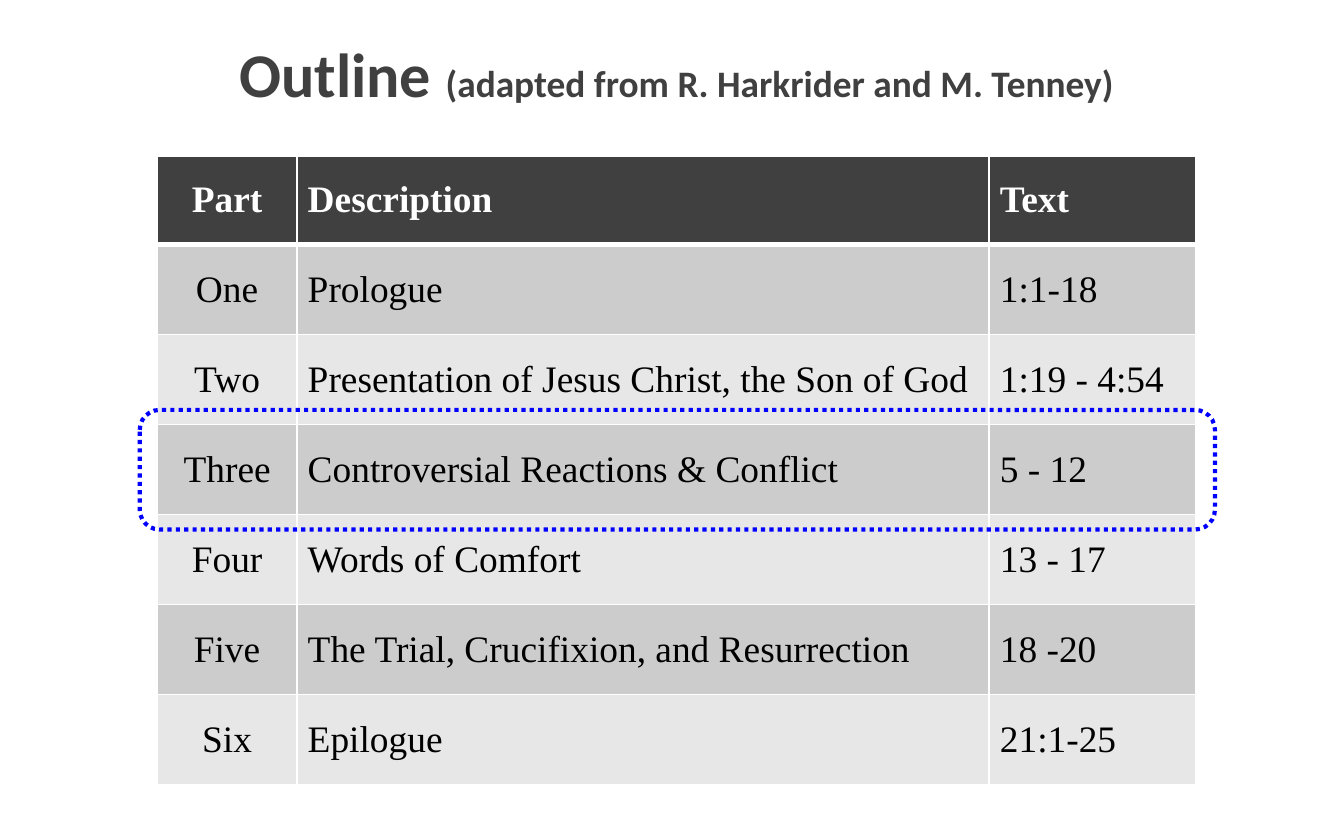
"""Build the outline slide with its table and highlighted part."""
from pptx import Presentation
from pptx import oxml
from pptx.dml.color import RGBColor
from pptx.enum import dml, shapes, text
from pptx.oxml import ns
from pptx.util import Pt

ROWS = [
    ("Part", "Description", "Text"),
    ("One", "Prologue", "1:1-18"),
    ("Two", "Presentation of Jesus Christ, the Son of God", "1:19 - 4:54"),
    ("Three", "Controversial Reactions & Conflict", "5 - 12"),
    ("Four", "Words of Comfort", "13 - 17"),
    ("Five", "The Trial, Crucifixion, and Resurrection", "18 -20"),
    ("Six", "Epilogue", "21:1-25"),
]
COLUMN_WIDTHS = (74.88, 370.8, 110.88)
HEADER_HEIGHT, ROW_HEIGHT = 47.52, 48.24


def color(value):
    return RGBColor.from_string(value)


class OutlineSlide:
    title_font, table_font = "Calibri", "Times New Roman"
    dark, bands, white, black, accent = "404040", ("E7E7E7", "CCCCCC"), "FFFFFF", "000000", "0000FF"

    def __init__(self, presentation):
        self.slide = presentation.slides.add_slide(presentation.slide_layouts[5])

    def title(self, parts, left, top, width, height):
        shape = self.slide.shapes.title
        shape.left, shape.top, shape.width, shape.height = map(Pt, (left, top, width, height))
        frame = shape.text_frame
        frame.vertical_anchor = text.MSO_ANCHOR.MIDDLE
        paragraph = frame.paragraphs[0]
        paragraph.alignment = text.PP_ALIGN.CENTER
        paragraph.font.name = self.title_font
        paragraph.font.bold = True
        paragraph.font.color.rgb = color(self.dark)
        for words, size in parts:
            run = paragraph.add_run()
            run.text = words
            run.font.size = Pt(size)

    def table(self, rows, widths, left, top):
        height = HEADER_HEIGHT + ROW_HEIGHT * (len(rows) - 1)
        shape = self.slide.shapes.add_table(
            len(rows), len(widths), Pt(left), Pt(top), Pt(sum(widths)), Pt(height))
        table = shape.table
        for column, width in zip(table.columns, widths):
            column.width = Pt(width)
        for index, values in enumerate(rows):
            table.rows[index].height = Pt(ROW_HEIGHT if index else HEADER_HEIGHT)
            for position, value in enumerate(values):
                self.cell(table.cell(index, position), value, index, position)

    def cell(self, cell, value, row, column):
        header = row == 0
        cell.margin_left = cell.margin_right = Pt(5.76)
        cell.margin_top = cell.margin_bottom = Pt(2.88)
        cell.vertical_anchor = text.MSO_ANCHOR.MIDDLE
        self.borders(cell, top=3 if row == 1 else 1, bottom=3 if header else 1)
        cell.fill.solid()
        cell.fill.fore_color.rgb = color(self.dark if header else self.bands[row % 2])
        cell.text = value
        paragraph = cell.text_frame.paragraphs[0]
        paragraph.alignment = text.PP_ALIGN.LEFT if column else text.PP_ALIGN.CENTER
        paragraph.font.name = self.table_font
        paragraph.font.size = Pt(20)
        paragraph.font.bold = header
        paragraph.font.color.rgb = color(self.white if header else self.black)

    def borders(self, cell, top, bottom):
        properties = cell._tc.get_or_add_tcPr()
        for side, width in (("L", 1), ("R", 1), ("T", top), ("B", bottom)):
            properties.append(oxml.parse_xml(
                f'<a:ln{side} {ns.nsdecls("a")} w="{Pt(width)}"><a:solidFill>'
                f'<a:srgbClr val="{self.white}"/></a:solidFill></a:ln{side}>'))

    def highlight(self, left, top, width, height):
        shape = self.slide.shapes.add_shape(
            shapes.MSO_SHAPE.ROUNDED_RECTANGLE, Pt(left), Pt(top), Pt(width), Pt(height))
        shape.shadow.inherit = False
        shape.fill.background()
        shape.line.color.rgb = color(self.accent)
        shape.line.width = Pt(2.25)
        shape.line.dash_style = dml.MSO_LINE.ROUND_DOT


def main():
    presentation = Presentation()
    presentation.slide_width, presentation.slide_height = Pt(720), Pt(450)
    outline = OutlineSlide(presentation)
    outline.title(
        [("Outline ", 33.3), ("(adapted from R. Harkrider and M. Tenney)", 20)],
        17.28, 18.72, 690.48, 40.32)
    outline.table(ROWS, COLUMN_WIDTHS, 84.24, 83.52)
    outline.highlight(74.88, 219.6, 576, 64.08)
    presentation.save("out.pptx")


if __name__ == "__main__":
    main()
